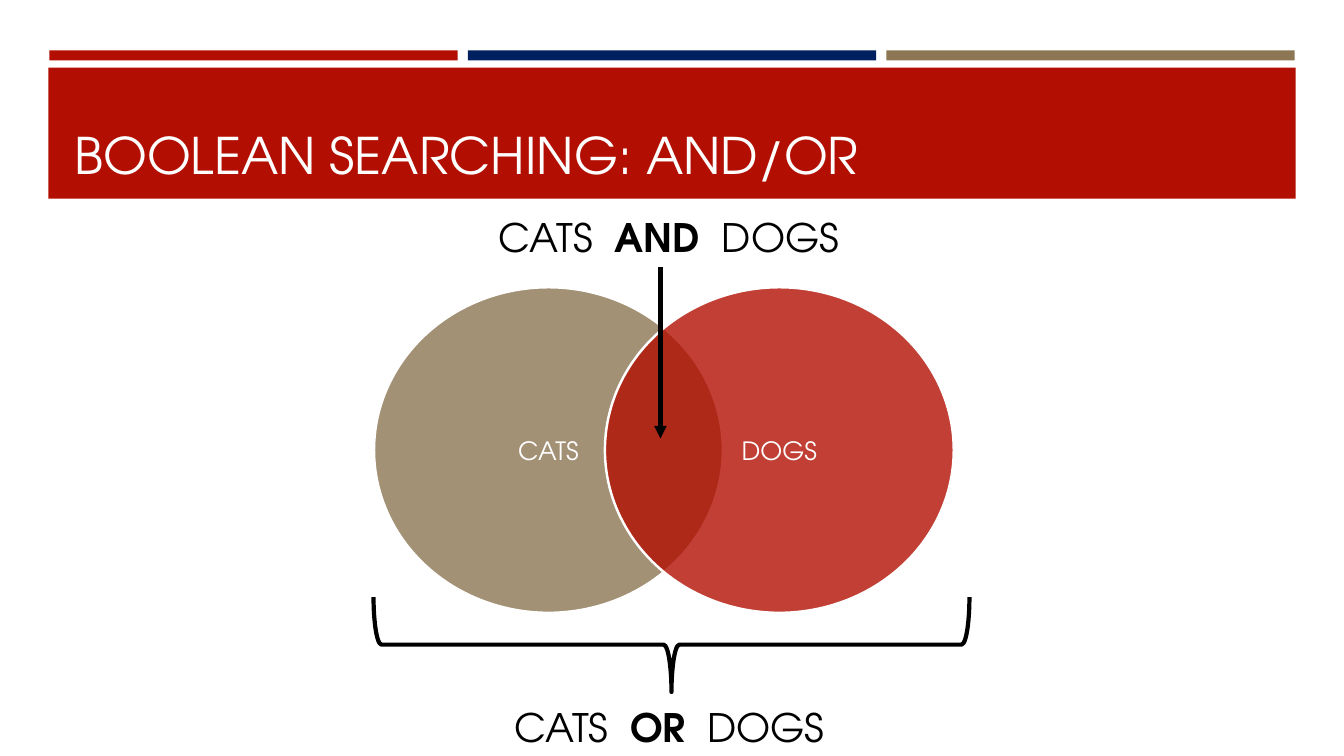
from lxml.etree import SubElement
from pptx import Presentation
from pptx.dml.color import RGBColor
from pptx.enum.shapes import MSO_CONNECTOR, MSO_SHAPE
from pptx.enum.text import MSO_ANCHOR, MSO_AUTO_SIZE, PP_ALIGN
from pptx.oxml.ns import qn
from pptx.util import Pt

RED = RGBColor(0xB2, 0x0F, 0x02)
NAVY = RGBColor(0x00, 0x20, 0x60)
TAN = RGBColor(0x8D, 0x76, 0x54)
WHITE = RGBColor(0xFF, 0xFF, 0xFF)
BLACK = RGBColor(0x00, 0x00, 0x00)

EMU_PER_PX = 9144  # 100 px to the inch


def px(*lengths):
    return [n * EMU_PER_PX for n in lengths]


class SlideBuilder:
    font = "TeX Gyre Adventor"

    def __init__(self, slide):
        self.shapes = slide.shapes

    def style(self, p, size, color):
        p.font.name = self.font
        p.font.size = Pt(size)
        p.font.color.rgb = color

    def shape(self, kind, box, fill=None, alpha=None, line=None, width=0):
        sp = self.shapes.add_shape(kind, *px(*box))
        sp.shadow.inherit = False
        if fill is None:
            sp.fill.background()
        else:
            sp.fill.solid()
            sp.fill.fore_color.rgb = fill
        if alpha is not None:
            clr = sp._element.spPr.find(qn("a:solidFill"))[0]
            SubElement(clr, qn("a:alpha"), val=str(alpha * 1000))
        if line is None:
            sp.line.fill.background()
        else:
            sp.line.color.rgb = line
            sp.line.width = Pt(width)
        return sp

    def circle(self, box, color, label):
        sp = self.shape(MSO_SHAPE.OVAL, box, color, 80, WHITE, 1.75)
        tf = sp.text_frame
        tf.vertical_anchor = MSO_ANCHOR.MIDDLE
        p = tf.paragraphs[0]
        p.text = label
        p.alignment = PP_ALIGN.CENTER
        self.style(p, 18, WHITE)

    def title(self, box, text):
        tf = self.shapes.add_textbox(*px(*box)).text_frame
        tf.word_wrap = True
        tf.vertical_anchor = MSO_ANCHOR.BOTTOM
        p = tf.paragraphs[0]
        p.text = text
        self.style(p, 36, WHITE)

    def query(self, box, left, operator, right):
        tf = self.shapes.add_textbox(*px(*box)).text_frame
        tf.word_wrap = False
        tf.auto_size = MSO_AUTO_SIZE.SHAPE_TO_FIT_TEXT
        p = tf.paragraphs[0]
        self.style(p, 28, BLACK)
        for text in (left, " ", operator, " ", right):
            r = p.add_run()
            r.text = text
            if text == operator:
                r.font.bold = True
            elif text == " ":  # widen the gap beside the operator
                r._r.get_or_add_rPr().set("spc", "780")

    def arrow(self, x1, y1, x2, y2):
        cx = self.shapes.add_connector(MSO_CONNECTOR.STRAIGHT, *px(x1, y1, x2, y2))
        cx.line.color.rgb = BLACK
        cx.line.width = Pt(3)
        SubElement(cx.line._get_or_add_ln(), qn("a:tailEnd"), type="triangle")
        SubElement(cx._element.spPr, qn("a:effectLst"))


def main():
    prs = Presentation()
    prs.slide_width, prs.slide_height = px(1333, 750)
    s = SlideBuilder(prs.slides.add_slide(prs.slide_layouts[6]))

    # Header stripes and title band
    for i, color in enumerate((RED, NAVY, TAN)):
        s.shape(MSO_SHAPE.RECTANGLE, (49 + i * 415, 50, 405, 10), color)
    s.shape(MSO_SHAPE.RECTANGLE, (48, 67, 1237, 130), RED)
    s.title((64, 77, 1206, 111), "BOOLEAN SEARCHING: AND/OR")

    # Overlapping circles
    for x, color, label in ((371, TAN, "CATS"), (600, RED, "DOGS")):
        s.circle((x, 285, 346, 323), color, label)

    # AND: the overlap
    s.query((485, 207, 364, 57), "CATS", "AND", "DOGS")

    # OR: everything under the brace
    brace = s.shape(MSO_SHAPE.LEFT_BRACE, (619, 344, 94, 591), line=BLACK, width=3)
    brace.rotation = 270
    s.query((500, 693, 334, 57), "CATS", "OR", "DOGS")
    s.arrow(655, 265, 655, 435)

    prs.save("out.pptx")


if __name__ == "__main__":
    main()
